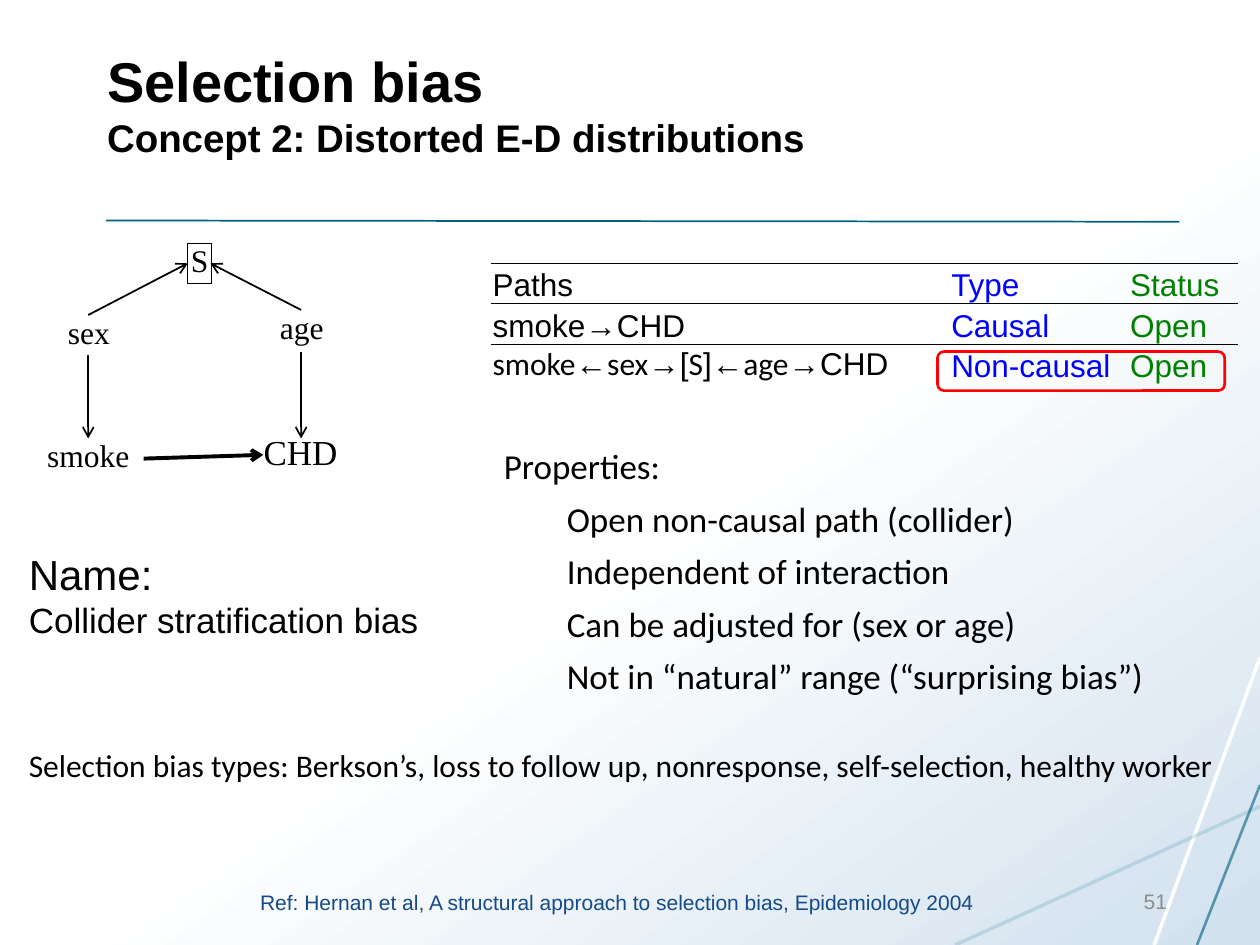
import pptx
import pptx.util
import pptx.dml.color
import pptx.enum.shapes
import pptx.enum.text
import pptx.oxml
import pptx.oxml.ns
import lxml.etree

Inches = pptx.util.Inches
Pt = pptx.util.Pt
SHAPES = pptx.enum.shapes.MSO_SHAPE
ALIGN = pptx.enum.text.PP_ALIGN
ANCHOR = pptx.enum.text.MSO_ANCHOR
qn = pptx.oxml.ns.qn

COLORS = {
    "black": "000000", "white": "FFFFFF", "haze": "D1E1EE",
    "teal": "00617F", "light_teal": "15718F", "blue": "0000FF",
    "green": "008000", "red": "FF0000", "navy": "154987", "gray": "8C8C8C",
}


def style_text(runs, font, size, color="black", bold=False):
    for run in runs:
        run.font.name = font
        run.font.size = Pt(size)
        run.font.bold = bold
        run.font.color.rgb = pptx.dml.color.RGBColor.from_string(COLORS[color])


def draw_line(x1, y1, x2, y2, color, width, opacity=100, arrow=False):
    line = slide.shapes.add_connector(
        pptx.enum.shapes.MSO_CONNECTOR.STRAIGHT, Inches(x1), Inches(y1), Inches(x2), Inches(y2))
    line.line.width = Pt(width)
    line.line.color.rgb = pptx.dml.color.RGBColor.from_string(COLORS[color])
    properties = line._element.spPr
    if opacity < 100:
        rgb = properties.find(".//" + qn("a:srgbClr"))
        lxml.etree.SubElement(rgb, qn("a:alpha"), val=str(opacity * 1000))
    if arrow:
        lxml.etree.SubElement(properties.find(qn("a:ln")), qn("a:tailEnd"), type="arrow")
    lxml.etree.SubElement(properties, qn("a:effectLst"))


deck = pptx.Presentation()
deck.slide_width = Inches(10)
deck.slide_height = Inches(7.5)
slide = deck.slides.add_slide(deck.slide_layouts[5])

backdrop = slide.background.fill
backdrop.gradient()
backdrop.gradient_angle = 305
for stop, position, color in zip(backdrop.gradient_stops, (0.54, 1), ("white", "haze")):
    stop.position = position
    stop.color.rgb = pptx.dml.color.RGBColor.from_string(COLORS[color])

draw_line(10, 5.22, 9.16, 7.5, "white", 2)
draw_line(10, 6.4, 7.58, 7.5, "light_teal", 2, opacity=16)
draw_line(10, 6.23, 9.5, 7.5, "teal", 1.5, opacity=60)
draw_line(0.84, 1.75, 9.36, 1.76, "teal", 1)

title = slide.shapes.title
title.left, title.top, title.width, title.height = Inches(0.75), Inches(0.26), Inches(8.5), Inches(1.06)
title.text_frame.text = "Selection bias\vConcept 2: Distorted E-D distributions"
title.text_frame.auto_size = pptx.enum.text.MSO_AUTO_SIZE.NONE
title.text_frame.vertical_anchor = ANCHOR.BOTTOM
heading = title.text_frame.paragraphs[0]
heading.alignment = ALIGN.LEFT
for run, size in zip(heading.runs, (32, 22)):
    style_text([run], "Arial", size, bold=True)

nodes = [
    ("smoke", 0.26, 3.48, 0.88, 0.32, 18),
    ("CHD", 2.09, 3.48, 0.59, 0.27, 20),
    ("age", 2.16, 2.46, 0.47, 0.32, 18),
    ("S", 1.49, 1.93, 0.19, 0.32, 18),
    ("sex", 0.48, 2.5, 0.45, 0.32, 18),
]
for label, x, y, width, height, size in nodes:
    node = slide.shapes.add_shape(
        SHAPES.FLOWCHART_PROCESS, Inches(x), Inches(y), Inches(width), Inches(height))
    node.shadow.inherit = False
    node.fill.background()
    if label == "S":
        node.line.width = Pt(0.75)
        node.line.color.rgb = pptx.dml.color.RGBColor.from_string(COLORS["black"])
    else:
        node.line.fill.background()
    frame = node.text_frame
    frame.margin_left = frame.margin_right = frame.margin_top = frame.margin_bottom = 0
    frame.word_wrap = False
    frame.vertical_anchor = ANCHOR.MIDDLE
    frame.text = label
    frame.paragraphs[0].alignment = ALIGN.CENTER
    frame.paragraphs[0].line_spacing = 0.8
    style_text(frame.paragraphs[0].runs, "Times New Roman", size)

for x1, y1, x2, y2, width in [
    (2.39, 2.46, 1.67, 2.09, 1),
    (2.39, 2.79, 2.39, 3.48, 1),
    (1.14, 3.64, 2.09, 3.61, 2.25),
    (0.7, 2.5, 1.49, 2.09, 1),
    (0.7, 2.82, 0.7, 3.48, 1),
]:
    draw_line(x1, y1, x2, y2, "black", width, arrow=True)

collider_path = ["smoke", "←", "sex", "→[", "S", "]←", "age", "→CHD"]
path_rows = [
    (["Paths"], ["Type"], ["Status"]),
    (["smoke→CHD"], ["Causal"], ["Open"]),
    (collider_path, ["Non-causal"], ["Open"]),
]
paths = slide.shapes.add_table(3, 3, Inches(3.9), Inches(2.09), Inches(5.93), Inches(0.96)).table
paths.first_row = paths.horz_banding = False
paths._tbl.tblPr.find(qn("a:tableStyleId")).text = "{2D5ABB26-0587-4C30-8999-92F81FD0307C}"
for column, width in zip(paths.columns, (3.64, 1.42, 0.87)):
    column.width = Inches(width)
for r, row in enumerate(path_rows):
    paths.rows[r].height = Inches(0.32)
    for c, (pieces, color) in enumerate(zip(row, ("black", "blue", "green"))):
        cell = paths.cell(r, c)
        cell.margin_left = cell.margin_right = cell.margin_top = Inches(0.01)
        cell.margin_bottom = 0
        cell.vertical_anchor = ANCHOR.BOTTOM
        cell.fill.background()
        for piece in pieces:
            run = cell.text_frame.paragraphs[0].add_run()
            run.text = piece
            is_variable = len(pieces) > 1 and piece.isalpha()
            style_text([run], "Calibri" if is_variable else "Arial", 18, color)
        borders = {0: ["a:lnT", "a:lnB"], 1: ["a:lnT"], 2: []}[r]
        for place, edge in enumerate(borders):
            border = lxml.etree.Element(qn(edge), w=str(Pt(0.5)))
            fill = lxml.etree.SubElement(border, qn("a:solidFill"))
            lxml.etree.SubElement(fill, qn("a:srgbClr"), val=COLORS["black"])
            cell._tc.tcPr.insert(place, border)

highlight = slide.shapes.add_shape(
    SHAPES.ROUNDED_RECTANGLE, Inches(7.44), Inches(2.79), Inches(2.28), Inches(0.31))
highlight.shadow.inherit = False
highlight.fill.background()
highlight.line.width = Pt(1.5)
highlight.line.color.rgb = pptx.dml.color.RGBColor.from_string(COLORS["red"])

properties_box = slide.shapes.add_textbox(Inches(3.9), Inches(3.48), Inches(5.98), Inches(2.37))
properties_box.text_frame.word_wrap = True
properties_box.text_frame.text = "\n".join([
    "Properties:",
    "Open non-causal path (collider)",
    "Independent of interaction",
    "Can be adjusted for (sex or age)",
    "Not in “natural” range (“surprising bias”)",
])
for i, item in enumerate(properties_box.text_frame.paragraphs):
    item.level = min(i, 1)
    item.space_before = Pt(6)
    item._p.get_or_add_pPr().set("marL", str(Inches(0.88 if i else 0.38)))
    item._p.get_or_add_pPr().set("indent", str(Inches(-0.38)))
    style_text(item.runs, "Calibri", 20)

bias_types = ("Selection bias types: Berkson’s, loss to follow up, nonresponse, "
              "self-selection, healthy worker")
reference = "Ref: Hernan et al, A structural approach to selection bias, Epidemiology 2004"
notes = [
    (0.13, 4.3, 3.32, 0.84, False, "Arial", "black",
     [("Name:", 24, ALIGN.LEFT), ("Collider stratification bias", 20, ALIGN.CENTER)]),
    (1.67, 7.01, 6.46, 0.3, True, "Arial", "navy", [(reference, 12, ALIGN.CENTER)]),
    (0.13, 5.87, 9.75, 0.4, False, "Calibri", "black", [(bias_types, 18, ALIGN.LEFT)]),
    (7.17, 6.95, 2.19, 0.4, True, "Arial", "gray", [("51", 12, ALIGN.RIGHT)]),
]
for x, y, width, height, wrap, font, color, lines in notes:
    frame = slide.shapes.add_textbox(Inches(x), Inches(y), Inches(width), Inches(height)).text_frame
    frame.word_wrap = wrap
    frame.vertical_anchor = ANCHOR.MIDDLE
    frame.text = "\n".join(text for text, _, _ in lines)
    for paragraph, (_, size, alignment) in zip(frame.paragraphs, lines):
        paragraph.alignment = alignment
        style_text(paragraph.runs, font, size, color)

deck.save("out.pptx")
